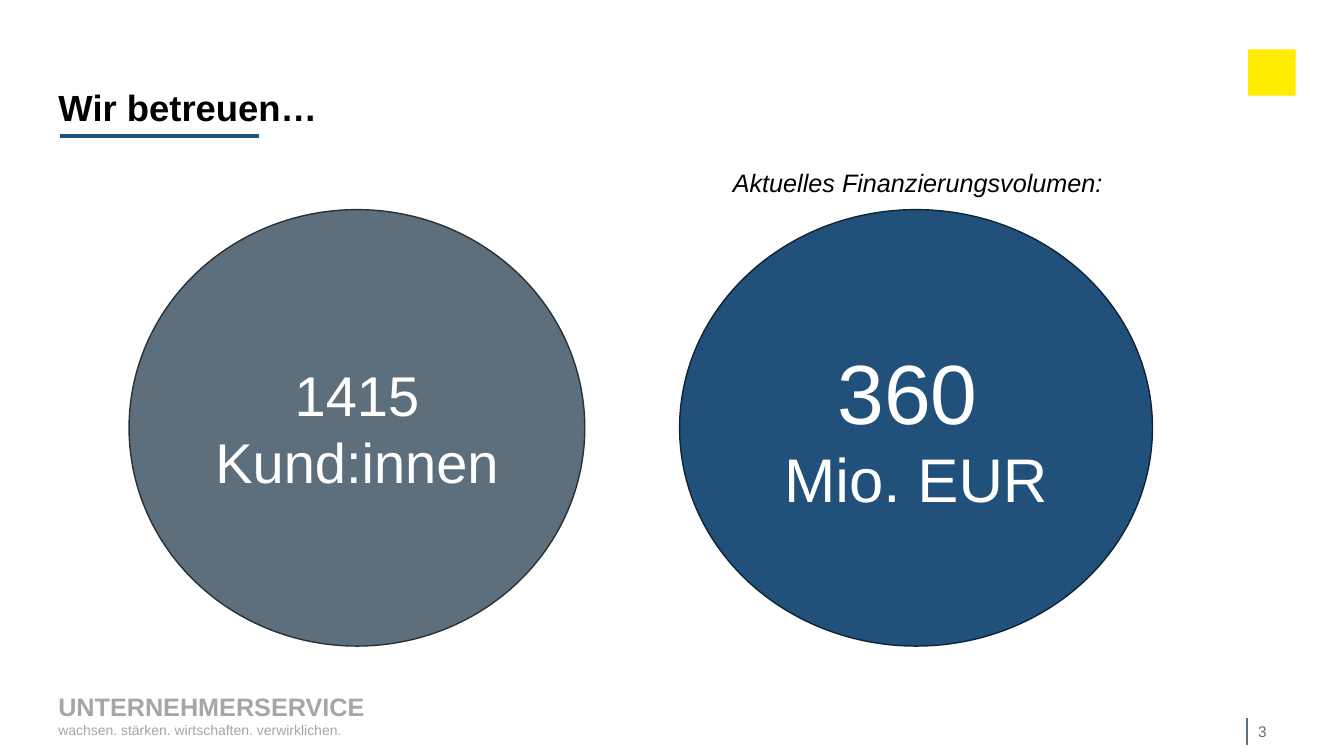
from pptx import Presentation
from pptx.dml.color import RGBColor
from pptx.enum.shapes import MSO_CONNECTOR, MSO_SHAPE
from pptx.enum.text import MSO_ANCHOR, MSO_AUTO_SIZE, PP_ALIGN
from pptx.oxml.ns import qn
from pptx.util import Inches, Pt
from lxml import etree

BLACK = RGBColor(0x00, 0x00, 0x00)
WHITE = RGBColor(0xFF, 0xFF, 0xFF)
BLUE = RGBColor(0x21, 0x51, 0x7A)
DARK_BLUE = RGBColor(0x0E, 0x24, 0x35)
SLATE = RGBColor(0x5D, 0x6F, 0x7D)
DARK_SLATE = RGBColor(0x29, 0x31, 0x37)
GREY = RGBColor(0xA6, 0xA6, 0xA6)
YELLOW = RGBColor(0xFF, 0xEC, 0x00)


def set_font(font, size, color, bold=False, italic=False):
    font.name = "Arial"
    font.size = Pt(size)
    font.color.rgb = color
    font.bold = bold
    font.italic = italic


prs = Presentation()
prs.slide_width = Inches(13.33)
prs.slide_height = Inches(7.5)
s = prs.slides.add_slide(prs.slide_layouts[5])

# Title
title = s.shapes.title
title.left, title.top = Inches(0.48), Inches(0.5)
title.width, title.height = Inches(9.18), Inches(0.83)
tf = title.text_frame
tf.text = "Wir betreuen…"
tf.auto_size = MSO_AUTO_SIZE.NONE
tf.vertical_anchor = MSO_ANCHOR.BOTTOM
p = tf.paragraphs[0]
p.alignment = PP_ALIGN.LEFT
p.line_spacing = 0.9
set_font(p.font, 26, BLACK, bold=True)

# Title underline and page number rule
for x1, y1, x2, y2, color, width in [
    (0.6, 1.35, 2.57, 1.35, BLUE, 3),
    (12.37, 7.12, 12.37, 7.39, SLATE, 1),
]:
    line = s.shapes.add_connector(
        MSO_CONNECTOR.STRAIGHT, Inches(x1), Inches(y1), Inches(x2), Inches(y2))
    line.line.color.rgb = color
    line.line.width = Pt(width)
    etree.SubElement(line._element.spPr, qn("a:effectLst"))

# Plain emblem square
emblem = s.shapes.add_shape(
    MSO_SHAPE.RECTANGLE, Inches(12.38), Inches(0.49), Inches(0.47), Inches(0.46))
emblem.shadow.inherit = False
emblem.fill.solid()
emblem.fill.fore_color.rgb = YELLOW
emblem.line.fill.background()

# Key figure circles: each line is a list of (text, size) runs
for left, width, fill, outline, lines in [
    (1.28, 4.52, SLATE, DARK_SLATE, [[("1415", 40)], [("Kund:innen", 40)]]),
    (6.74, 4.69, BLUE, DARK_BLUE, [[("360", 60), (" ", 44)], [("Mio. EUR", 44)]]),
]:
    sp = s.shapes.add_shape(
        MSO_SHAPE.FLOWCHART_CONNECTOR, Inches(left), Inches(2.08), Inches(width), Inches(4.33))
    sp.shadow.inherit = False
    sp.fill.solid()
    sp.fill.fore_color.rgb = fill
    sp.line.color.rgb = outline
    sp.line.width = Pt(1)
    tf = sp.text_frame
    tf.vertical_anchor = MSO_ANCHOR.MIDDLE
    for i, runs in enumerate(lines):
        p = tf.add_paragraph() if i else tf.paragraphs[0]
        p.alignment = PP_ALIGN.CENTER
        for text, size in runs:
            r = p.add_run()
            r.text = text
            set_font(r.font, size, WHITE)

# Caption, footer and page number: each line is (text, size, bold, italic)
for left, top, width, height, anchor, color, lines in [
    (7.17, 1.61, 4.16, 0.4, MSO_ANCHOR.TOP, BLACK,
     [("Aktuelles Finanzierungsvolumen:", 18, False, True)]),
    (0.48, 6.81, 3.42, 0.57, MSO_ANCHOR.TOP, GREY,
     [("UNTERNEHMERSERVICE", 18, True, False),
      ("wachsen. stärken. wirtschaften. verwirklichen.", 10, False, False)]),
    (12.38, 7.02, 0.95, 0.48, MSO_ANCHOR.MIDDLE, SLATE, [("3", 11, False, False)]),
]:
    box = s.shapes.add_textbox(Inches(left), Inches(top), Inches(width), Inches(height))
    tf = box.text_frame
    tf.word_wrap = True
    tf.vertical_anchor = anchor
    for i, (text, size, bold, italic) in enumerate(lines):
        p = tf.add_paragraph() if i else tf.paragraphs[0]
        p.text = text
        set_font(p.font, size, color, bold, italic)

prs.save("out.pptx")
